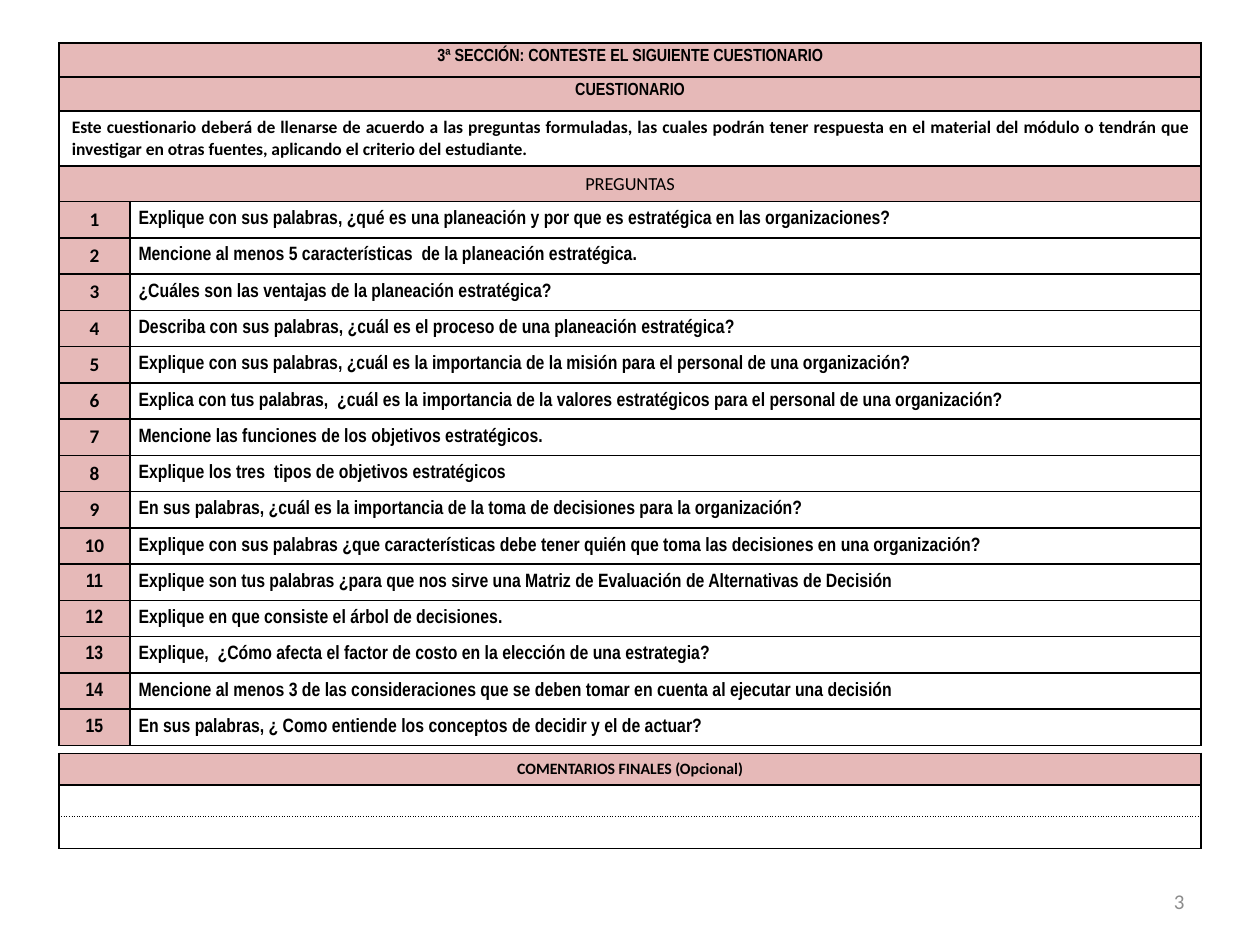
from lxml.etree import SubElement
from pptx import Presentation
from pptx.dml.color import RGBColor
from pptx.enum.text import MSO_ANCHOR as Anchor, PP_ALIGN as Align
from pptx.oxml.ns import qn
from pptx.util import Inches, Pt

QUESTIONS = [
    "Explique con sus palabras, ¿qué es una planeación y por que es estratégica en las organizaciones?",
    "Mencione al menos 5 características  de la planeación estratégica.",
    "¿Cuáles son las ventajas de la planeación estratégica?",
    "Describa con sus palabras, ¿cuál es el proceso de una planeación estratégica?",
    "Explique con sus palabras, ¿cuál es la importancia de la misión para el personal de una organización?",
    "Explica con tus palabras,  ¿cuál es la importancia de la valores estratégicos para el personal de una organización?",
    "Mencione las funciones de los objetivos estratégicos.",
    "Explique los tres  tipos de objetivos estratégicos",
    "En sus palabras, ¿cuál es la importancia de la toma de decisiones para la organización?",
    "Explique con sus palabras ¿que características debe tener quién que toma las decisiones en una organización?",
    "Explique son tus palabras ¿para que nos sirve una Matriz de Evaluación de Alternativas de Decisión",
    "Explique en que consiste el árbol de decisiones.",
    "Explique,  ¿Cómo afecta el factor de costo en la elección de una estrategia?",
    "Mencione al menos 3 de las consideraciones que se deben tomar en cuenta al ejecutar una decisión",
    "En sus palabras, ¿ Como entiende los conceptos de decidir y el de actuar?",
]
INSTRUCTIONS = (
    "Este cuestionario deberá de llenarse de acuerdo a las preguntas formuladas, "
    "las cuales podrán tener respuesta en el material del módulo o tendrán que "
    "investigar en otras fuentes, aplicando el criterio del estudiante."
)
PINK, WHITE, BLACK, GRAY = "E6B9B8", "FFFFFF", "000000", "8C8C8C"
NARROW, SANS = "Arial Narrow", "Calibri"
LEFT, WIDTH, NUMBER_WIDTH = 4.7, 90.6, 5.6
FIRST_CALIBRI_END = 10  # numbers after this one use the narrow font


def color(value):
    return RGBColor.from_string(value)


def grid(units):
    """Length of a number of grid units; the slide has 100 columns and 75 rows."""
    return Inches(units / 10)


def write(frame, text, size=10, font=SANS, ink=BLACK, bold=True,
          align=Align.CENTER, before=0):
    para = frame.paragraphs[0]
    para.alignment = align
    para.space_before = Pt(before)
    span = para.add_run()
    span.text = text
    span.font.size = Pt(size)
    span.font.name = font
    span.font.bold = bold
    span.font.color.rgb = color(ink)


def set_borders(cell, dotted=()):
    """Black 1 pt line on each side; sides named in dotted (L, R, T, B) are dotted."""
    properties = cell._tc.get_or_add_tcPr()
    for index, side in enumerate("LRTB"):
        line = SubElement(properties, qn(f"a:ln{side}"), w=str(Pt(1)))
        fill = SubElement(line, qn("a:solidFill"))
        SubElement(fill, qn("a:srgbClr"), val=BLACK)
        SubElement(line, qn("a:prstDash"), val="sysDot" if side in dotted else "solid")
        properties.insert(index, line)


class Page:
    def __init__(self, deck):
        self.slide = deck.slides.add_slide(deck.slide_layouts[6])

    def table(self, top, columns, rows):
        frame = self.slide.shapes.add_table(
            len(rows), len(columns), grid(LEFT), grid(top), grid(sum(columns)), grid(sum(rows)))
        table = frame.table
        table.first_row = table.horz_banding = False
        for column, width in zip(table.columns, columns):
            column.width = grid(width)
        for row, height in zip(table.rows, rows):
            row.height = grid(height)
        for cell in table.iter_cells():
            set_borders(cell)
        return table

    def cell(self, cell, text, fill=PINK, anchor=Anchor.MIDDLE, inset=(1, 0.5), **style):
        cell.fill.solid()
        cell.fill.fore_color.rgb = color(fill)
        cell.vertical_anchor = anchor
        cell.margin_left = cell.margin_right = grid(inset[0])
        cell.margin_top = cell.margin_bottom = grid(inset[1])
        write(cell.text_frame, text, **style)

    def blank_cell(self, cell, dotted):
        cell.fill.solid()
        cell.fill.fore_color.rgb = color(WHITE)
        set_borders_again = cell._tc.get_or_add_tcPr()
        for line in set_borders_again.findall(qn(f"a:ln{dotted}")):
            line.find(qn("a:prstDash")).set("val", "sysDot")
        # Keeps the empty line as small as the heading's text
        end = cell.text_frame.paragraphs[0]._p.get_or_add_endParaRPr()
        end.set("sz", "900")

    def text(self, left, top, width, height, text, **style):
        box = self.slide.shapes.add_textbox(grid(left), grid(top), grid(width), grid(height))
        box.text_frame.word_wrap = True
        box.text_frame.vertical_anchor = Anchor.MIDDLE
        write(box.text_frame, text, **style)


def add_questionnaire(page):
    headings = [
        ("3ª SECCIÓN: CONTESTE EL SIGUIENTE CUESTIONARIO", 2.7,
         dict(font=NARROW, anchor=Anchor.TOP)),
        ("CUESTIONARIO", 2.7, dict(font=NARROW, anchor=Anchor.TOP)),
        (INSTRUCTIONS, 4.4, dict(fill=WHITE, align=Align.JUSTIFY)),
        ("PREGUNTAS", 2.8, dict(size=10.5, bold=False)),
    ]
    heights = [height for _, height, _ in headings] + [2.88] * len(QUESTIONS)
    table = page.table(3.4, [NUMBER_WIDTH, WIDTH - NUMBER_WIDTH], heights)
    for row, (text, _, style) in enumerate(headings):
        table.cell(row, 0).merge(table.cell(row, 1))
        page.cell(table.cell(row, 0), text, before=3, **style)
    for number, question in enumerate(QUESTIONS, 1):
        row = len(headings) + number - 1
        page.cell(table.cell(row, 0), str(number), size=11,
                  font=SANS if number <= FIRST_CALIBRI_END else NARROW)
        page.cell(table.cell(row, 1), question, fill=WHITE, inset=(0.7, 0.4),
                  size=11, font=NARROW, align=Align.JUSTIFY, before=4)


def add_comments(page):
    table = page.table(59.8, [WIDTH], [2.5] * 3)
    page.cell(table.cell(0, 0), "COMENTARIOS FINALES (Opcional)", size=9)
    page.blank_cell(table.cell(1, 0), dotted="B")
    page.blank_cell(table.cell(2, 0), dotted="T")


def main():
    deck = Presentation()
    deck.slide_width, deck.slide_height = grid(100), grid(75)
    page = Page(deck)
    page.text(71.7, 69.5, 23.3, 4, "3", size=12, ink=GRAY, bold=False, align=Align.RIGHT)
    add_questionnaire(page)
    add_comments(page)
    deck.save("out.pptx")


if __name__ == "__main__":
    main()
